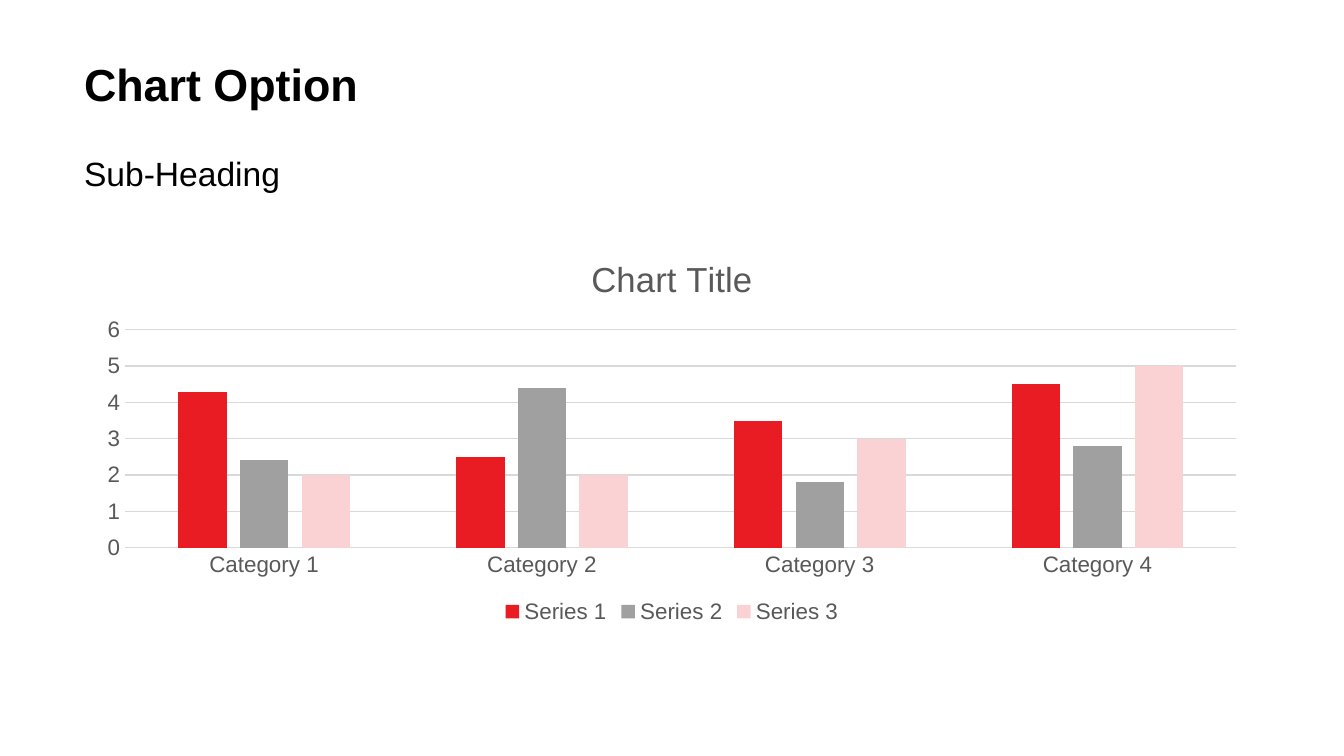
from pptx import Presentation
from pptx.chart.data import CategoryChartData
from pptx.dml.color import RGBColor
from pptx.enum.chart import XL_CHART_TYPE as ChartType, XL_LEGEND_POSITION as LegendPosition, XL_TICK_MARK as TickMark
from pptx.util import Pt

SLIDE_SIZE = (1344, 756)
LEFT, WIDTH = 84, 1176
FONT = "Arial"
BLACK, GREY, RULE = "000000", "595959", "D9D9D9"

HEADINGS = [
    ("Chart Option", 63, 94, 24, True),
    ("Sub-Heading", 157, 63, 18, False),
]
CHART_TOP, CHART_HEIGHT = 235, 394
CHART_TITLE = "Chart Title"
CATEGORIES = ["Category 1", "Category 2", "Category 3", "Category 4"]
SERIES = [
    ("Series 1", (4.3, 2.5, 3.5, 4.5), "E91C24"),
    ("Series 2", (2.4, 4.4, 1.8, 2.8), "A0A0A0"),
    ("Series 3", (2, 2, 3, 5), "FBD2D3"),
]


def px(*lengths):
    return [round(length * 914400 / 134.4) for length in lengths]


def color(value):
    return RGBColor.from_string(value)


def style_font(font, size, value, bold=False):
    font.name = FONT
    font.size = Pt(size)
    font.bold = bold
    font.color.rgb = color(value)


def style_line(line):
    line.color.rgb = color(RULE)
    line.width = Pt(0.75)


def add_heading(slide, text, top, height, size, bold):
    frame = slide.shapes.add_textbox(*px(LEFT, top, WIDTH, height)).text_frame
    frame.word_wrap = True
    frame.margin_left = frame.margin_top = frame.margin_right = frame.margin_bottom = 0
    paragraph = frame.paragraphs[0]
    paragraph.text = text
    paragraph.line_spacing = 0.9
    style_font(paragraph.font, size, BLACK, bold)


def add_column_chart(slide):
    data = CategoryChartData()
    data.categories = CATEGORIES
    for name, values, _ in SERIES:
        data.add_series(name, values)
    chart = slide.shapes.add_chart(
        ChartType.COLUMN_CLUSTERED, *px(LEFT, CHART_TOP, WIDTH, CHART_HEIGHT), data
    ).chart
    style_font(chart.font, 10, BLACK)

    chart.has_title = True
    title = chart.chart_title
    title.include_in_layout = False
    paragraph = title.text_frame.paragraphs[0]
    paragraph.text = CHART_TITLE
    style_font(paragraph.font, 18.6, GREY)

    chart.has_legend = True
    chart.legend.position = LegendPosition.BOTTOM
    chart.legend.include_in_layout = False
    style_font(chart.legend.font, 12, GREY)

    for axis in (chart.category_axis, chart.value_axis):
        axis.major_tick_mark = axis.minor_tick_mark = TickMark.NONE
        style_font(axis.tick_labels.font, 12, GREY)
    style_line(chart.category_axis.format.line)
    chart.value_axis.format.line.fill.background()
    style_line(chart.value_axis.major_gridlines.format.line)

    plot = chart.plots[0]
    plot.gap_width = 219
    plot.overlap = -27
    plot.vary_by_categories = False
    for series, (_, _, fill) in zip(plot.series, SERIES):
        series.format.fill.solid()
        series.format.fill.fore_color.rgb = color(fill)


presentation = Presentation()
presentation.slide_width, presentation.slide_height = px(*SLIDE_SIZE)
slide = presentation.slides.add_slide(presentation.slide_layouts[6])
for heading in HEADINGS:
    add_heading(slide, *heading)
add_column_chart(slide)
presentation.save("out.pptx")
